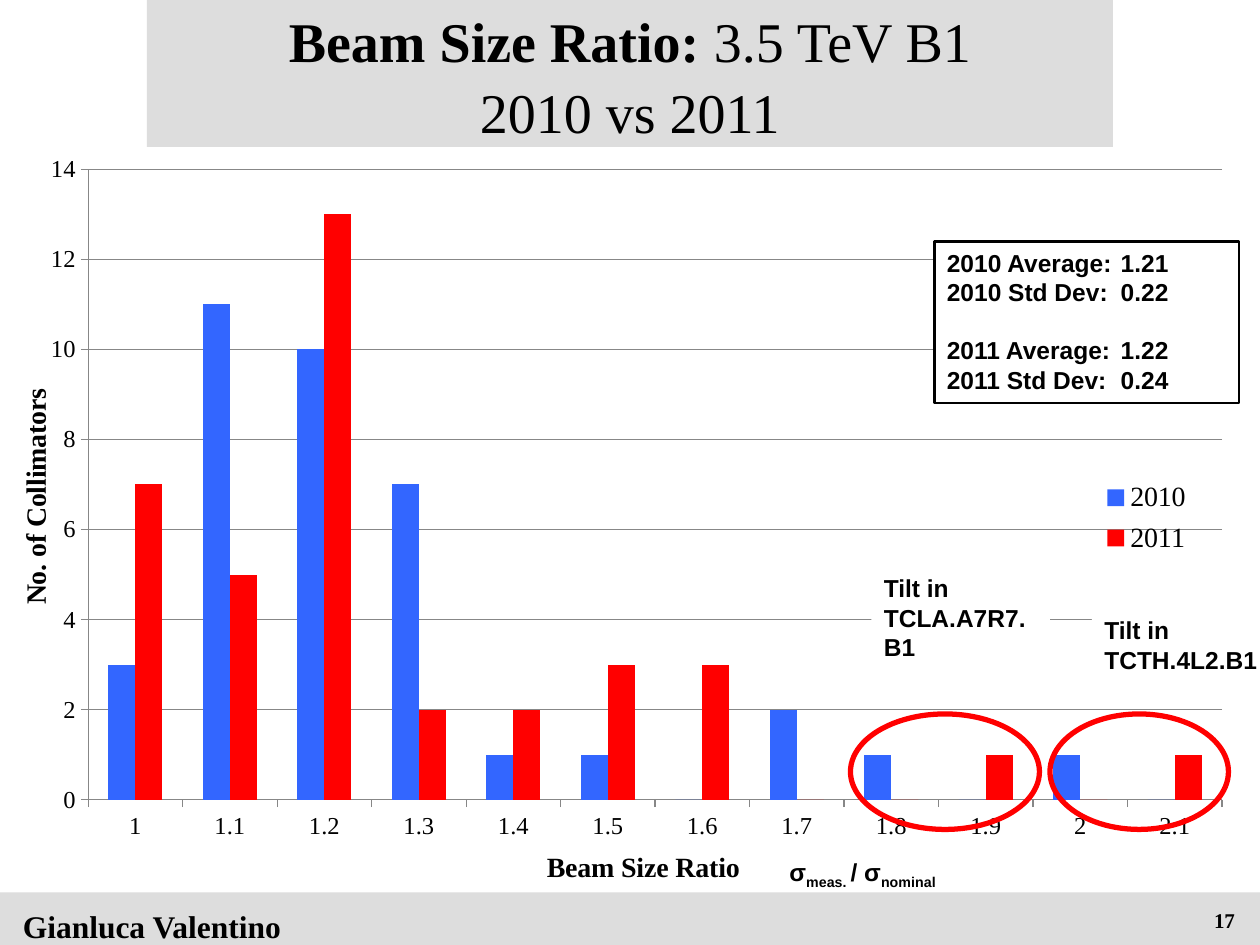
from dataclasses import dataclass

from lxml import etree
from pptx import Presentation
from pptx import util as u
from pptx.chart import data
from pptx.dml.color import RGBColor
from pptx.enum import chart as charts
from pptx.enum import shapes, text
from pptx.oxml import ns


@dataclass(frozen=True)
class Theme:
    serif: str = "Times New Roman"
    sans: str = "Arial"
    black: str = "000000"
    white: str = "FFFFFF"
    band: str = "DDDDDD"
    grid: str = "878787"
    blue: str = "3366FF"
    red: str = "FF0000"
    title: int = 32
    author: int = 18
    label: int = 16
    note: int = 14
    page: int = 12


THEME = Theme()
CELL = u.Inches(1) // 12  # the slide is a grid of 120 columns by 90 rows


@dataclass(frozen=True)
class Box:
    """Columns and rows on the slide grid."""
    col: float
    row: float
    cols: float
    rows: float

    def area(self, col, row, cols, rows):
        return Box(self.col + col, self.row + row, cols, rows)

    def emu(self):
        return [round(n * CELL) for n in (self.col, self.row, self.cols, self.rows)]


def style(font, color=THEME.black, **values):
    for name, value in values.items():
        setattr(font, name, u.Pt(value) if name == "size" else value)
    font.color.rgb = RGBColor.from_string(color)


def serif(font, size, bold=True):
    style(font, name=THEME.serif, size=size, bold=bold)


def note(font):
    style(font, name=THEME.sans, size=THEME.note, bold=True)


def add_shape(slide, box, kind="RECTANGLE", fill=None, line=None, width=1.25):
    shape = slide.shapes.add_shape(getattr(shapes.MSO_SHAPE, kind), *box.emu())
    shape.shadow.inherit = False
    if fill:
        shape.fill.solid()
        shape.fill.fore_color.rgb = RGBColor.from_string(fill)
    else:
        shape.fill.background()
    if line:
        shape.line.color.rgb = RGBColor.from_string(line)
        shape.line.width = u.Pt(width)
    else:
        shape.line.fill.background()
    return shape


def write_lines(shape, lines):
    frame = shape.text_frame
    frame.word_wrap = True
    frame.vertical_anchor = text.MSO_ANCHOR.TOP
    for index, line in enumerate(lines):
        paragraph = frame.add_paragraph() if index else frame.paragraphs[0]
        paragraph.alignment = text.PP_ALIGN.LEFT
        run = paragraph.add_run()
        run.text = line
        note(run.font)
    return frame.paragraphs


def add_title(slide, box):
    title = slide.shapes.title
    title.left, title.top, title.width, title.height = box.emu()
    title.fill.solid()
    title.fill.fore_color.rgb = RGBColor.from_string(THEME.band)
    title.text_frame.auto_size = text.MSO_AUTO_SIZE.NONE
    title.text_frame.vertical_anchor = text.MSO_ANCHOR.MIDDLE
    heading = title.text_frame.paragraphs[0]
    heading.alignment = text.PP_ALIGN.CENTER
    heading.line_spacing = 1.06
    for words, bold in (("Beam Size Ratio:", True), (" 3.5 TeV B1", False),
                        (None, False), ("2010 vs 2011", False)):
        if words is None:
            heading.add_line_break()
            continue
        run = heading.add_run()
        run.text = words
        serif(run.font, THEME.title, bold)


def add_footer(slide, box):
    add_shape(slide, box, fill=THEME.band)
    for words, col, size, align in (
            ("Gianluca Valentino", 1, THEME.author, text.PP_ALIGN.LEFT),
            ("17", 91, THEME.page, text.PP_ALIGN.RIGHT)):
        frame = slide.shapes.add_textbox(*box.area(col, 0.8, 27.8, 4).emu()).text_frame
        frame.word_wrap = True
        paragraph = frame.paragraphs[0]
        paragraph.alignment = align
        run = paragraph.add_run()
        run.text = words
        serif(run.font, size)


def place(element, index, inner=False, **shares):
    """Give a chart element a manual layout in shares of the chart."""
    for old in element.findall(ns.qn("c:layout")):
        element.remove(old)
    layout = etree.Element(ns.qn("c:layout"))
    manual = etree.SubElement(layout, ns.qn("c:manualLayout"))
    values = {"layoutTarget": "inner"} if inner else {}
    values.update(xMode="edge", yMode="edge", **shares)
    for name, value in values.items():
        etree.SubElement(manual, ns.qn("c:" + name)).set("val", str(value))
    element.insert(index, layout)


def add_histogram(slide, box):
    counts = data.CategoryChartData()
    counts.categories = [f"{n / 10:g}" for n in range(10, 22)]
    counts.add_series("2010", (3, 11, 10, 7, 1, 1, 0, 2, 1, 0, 1, 0))
    counts.add_series("2011", (7, 5, 13, 2, 2, 3, 3, 0, 0, 1, 0, 1))
    chart = slide.shapes.add_chart(
        charts.XL_CHART_TYPE.COLUMN_CLUSTERED, *box.emu(), counts).chart
    chart.has_title = False
    serif(chart.font, THEME.note, bold=False)
    plot = chart.plots[0]
    plot.gap_width, plot.overlap, plot.vary_by_categories = 150, 0, False
    for series, color in zip(plot.series, (THEME.blue, THEME.red)):
        series.format.fill.solid()
        series.format.fill.fore_color.rgb = RGBColor.from_string(color)

    # Axes
    ratio, collimators = chart.category_axis, chart.value_axis
    collimators.minimum_scale, collimators.maximum_scale = 0, 14
    collimators.major_unit = 2
    collimators.has_major_gridlines = True
    for axis, name, x, y in ((ratio, "Beam Size Ratio", 0.43, 0.94),
                             (collimators, "No. of Collimators", 0.01, 0.32)):
        axis.major_tick_mark = charts.XL_TICK_MARK.OUTSIDE
        serif(axis.tick_labels.font, THEME.note, bold=False)
        caption = axis.axis_title.text_frame.paragraphs[0].add_run()
        caption.text = name
        serif(caption.font, THEME.label)
        place(axis.axis_title._element, 1, x=x, y=y)
    for ruled in (ratio, collimators, collimators.major_gridlines):
        ruled.format.line.color.rgb = RGBColor.from_string(THEME.grid)
        ruled.format.line.width = u.Pt(0.75)

    # Legend and plot area
    chart.has_legend = True
    chart.legend.position = charts.XL_LEGEND_POSITION.RIGHT
    chart.legend.include_in_layout = False
    serif(chart.legend.font, THEME.label, bold=False)
    place(chart.legend._element, 1, x=0.87, y=0.44, w=0.08, h=0.12)
    plot_area = chart._chartSpace.find(".//" + ns.qn("c:plotArea"))
    place(plot_area, 0, inner=True, x=0.07, y=0.03, w=0.9, h=0.85)


def add_annotations(slide, box):
    # Ratio symbol beside the axis title
    ratio = slide.shapes.add_textbox(*box.area(74, 67, 19, 4).emu()).text_frame
    ratio.word_wrap = True
    for words, subscript in (("σ", False), ("meas. ", True),
                             ("/ σ", False), ("nominal", True)):
        run = ratio.paragraphs[0].add_run()
        run.text = words
        note(run.font)
        if subscript:
            run._r.get_or_add_rPr().set("baseline", "-25000")

    # Statistics, with the figures on a tab stop
    panel = add_shape(slide, box.area(89, 9, 29, 15.4), fill=THEME.white, line=THEME.black)
    stats = write_lines(panel, ("2010 Average:\t1.21", "2010 Std Dev:\t0.22",
                                "2011 Average:\t1.22", "2011 Std Dev:\t0.24"))
    for line in stats:
        tabs = etree.SubElement(line._p.get_or_add_pPr(), ns.qn("a:tabLst"))
        etree.SubElement(tabs, ns.qn("a:tab"), pos=str(u.Inches(1.38)), algn="l")
    stats[2].space_before = u.Pt(16.5)

    # Tilted collimators and their rings
    for words, *cells in (("Tilt in TCLA.A7R7.B1", 83, 40, 17, 9.7),
                          ("Tilt in TCTH.4L2.B1", 104, 44, 18, 6.8)):
        write_lines(add_shape(slide, box.area(*cells), fill=THEME.white), [words])
    for col, cols in ((81, 18), (100, 17)):
        add_shape(slide, box.area(col, 54, cols, 11), "OVAL", line=THEME.red, width=3)


def main():
    deck = Presentation()
    deck.slide_width, deck.slide_height = 120 * CELL, 90 * CELL
    slide = deck.slides.add_slide(deck.slide_layouts.get_by_name("Title Only"))
    graph = Box(0, 14, 120, 71)
    add_footer(slide, Box(0, 85, 120, 5))
    add_title(slide, Box(14, 0, 92, 14))
    add_histogram(slide, graph)
    add_annotations(slide, graph)
    deck.save("out.pptx")


if __name__ == "__main__":
    main()
